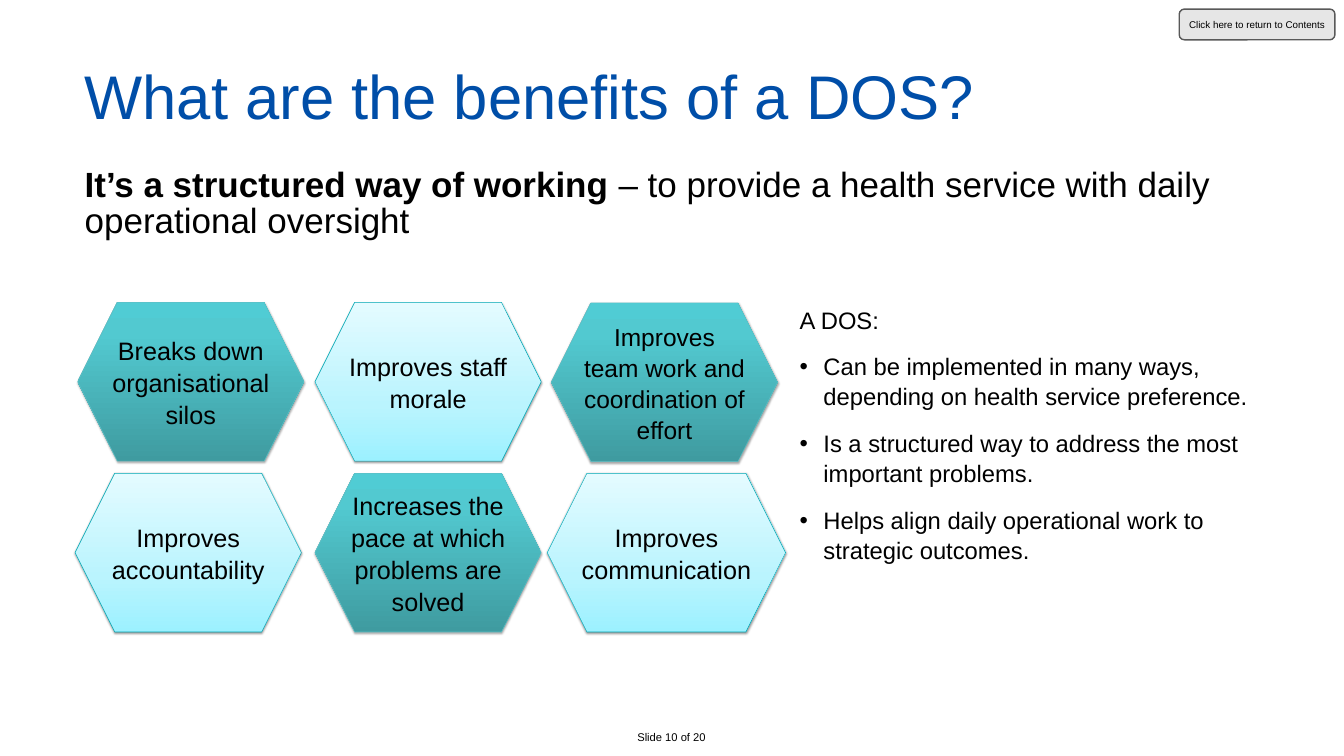
from copy import deepcopy

from lxml import etree
from pptx import Presentation
from pptx.dml.color import RGBColor
from pptx.enum.shapes import MSO_SHAPE
from pptx.enum.text import MSO_ANCHOR, MSO_AUTO_SIZE, PP_ALIGN
from pptx.oxml.ns import qn
from pptx.util import Inches, Pt

HEXAGON, ROUNDED = MSO_SHAPE.HEXAGON, MSO_SHAPE.ROUNDED_RECTANGLE
LEFT, CENTER = PP_ALIGN.LEFT, PP_ALIGN.CENTER
TOP, MIDDLE = MSO_ANCHOR.TOP, MSO_ANCHOR.MIDDLE
NO_FIT = MSO_AUTO_SIZE.NONE

BLACK, BLUE = "000000", "004EA8"
LINE_SPACING = 1.05
DARK = {
    "stops": [(0, "3F9BA0"), (0.8, "52C9D0"), (1, "50CCD4")],
    "line": "5FC0C6", "shadow_alpha": 35, "shadow_distance": 1.8,
}
LIGHT = {
    "stops": [(0, "9CF1FF"), (0.35, "BAF4FE"), (1, "E4FBFF")],
    "line": "00A4B1", "shadow_alpha": 38, "shadow_distance": 1.6,
}

# Text, left, top, width, text size; the looks alternate along the grid
BENEFITS = [
    ("Breaks down organisational silos", 1.54, 6, 4.49, 36),
    ("Improves staff morale", 6.25, 6, 4.49, 36),
    ("Improves team work and coordination of effort", 10.94, 6.01, 4.49, 35),
    ("Improves accountability", 1.49, 9.39, 4.49, 36),
    ("Increases the pace at which problems are solved", 6.25, 9.39, 4.49, 36),
    ("Improves communication", 10.86, 9.39, 4.73, 36),
]
HEXAGON_HEIGHT = 3.15

FEATURES = [
    "Can be implemented in many ways, depending on health service preference.",
    "Is a structured way to address the most important problems.",
    "Helps align daily operational work to strategic outcomes.",
]


def color(hex_value):
    return RGBColor.from_string(hex_value)


def set_values(target, values):
    for name, value in values.items():
        setattr(target, name, value)


def place(shape, left, top, width, height):
    set_values(shape, {
        "left": Inches(left), "top": Inches(top),
        "width": Inches(width), "height": Inches(height),
    })


def format_frame(frame, anchor=MIDDLE, inset=0):
    side, edge = Inches(inset), Inches(inset / 2)
    set_values(frame, {
        "word_wrap": True, "auto_size": NO_FIT, "vertical_anchor": anchor,
        "margin_left": side, "margin_right": side,
        "margin_top": edge, "margin_bottom": edge,
    })


def write(paragraph, pieces, size, hex_value=BLACK, **layout):
    """Fill a paragraph with (text, bold) pieces."""
    set_values(paragraph, {"space_before": Pt(0), **layout})
    for text, bold in pieces:
        run = paragraph.add_run()
        run.text = text
        set_values(run.font, {"name": "Arial", "size": Pt(size), "bold": bold})
        run.font.color.rgb = color(hex_value)


def set_indent(paragraph, margin, bullet=None):
    properties = paragraph._p.get_or_add_pPr()
    hanging = Inches(0.47) if bullet else 0
    properties.set("marL", str(Inches(margin)))
    properties.set("indent", str(-hanging))
    if bullet:
        etree.SubElement(properties, qn("a:buFont")).set("typeface", "Arial")
        etree.SubElement(properties, qn("a:buChar")).set("char", bullet)
    else:
        etree.SubElement(properties, qn("a:buNone"))


def add_text(slide, box, pieces, size, inset=0, **layout):
    text_box = slide.shapes.add_textbox(*map(Inches, box))
    format_frame(text_box.text_frame, TOP, inset)
    write(text_box.text_frame.paragraphs[0], pieces, size, **layout)


def add_labelled_shape(slide, kind, box, label, size, line, line_width, **layout):
    shape = slide.shapes.add_shape(kind, *map(Inches, box))
    shape.shadow.inherit = False
    shape.line.color.rgb = color(line)
    shape.line.width = Pt(line_width)
    format_frame(shape.text_frame)
    write(shape.text_frame.paragraphs[0], [(label, False)], size,
          alignment=CENTER, **layout)
    return shape


def fill_gradient(shape, stops):
    shape.fill.gradient()
    shape.fill.gradient_angle = 90
    stop_list = shape._element.spPr.find(qn("a:gradFill")).find(qn("a:gsLst"))
    while len(stop_list) < len(stops):
        stop_list.append(deepcopy(stop_list[-1]))
    for stop, (position, hex_value) in zip(shape.fill.gradient_stops, stops):
        stop.position = position
        stop.color.rgb = color(hex_value)


def add_shadow(shape, alpha, distance):
    effects = shape._element.spPr.find(qn("a:effectLst"))
    shadow = etree.SubElement(effects, qn("a:outerShdw"), {
        "blurRad": str(Pt(3.1)), "dist": str(Pt(distance)),
        "dir": "5400000", "rotWithShape": "0",
    })
    tone = etree.SubElement(shadow, qn("a:srgbClr"), val=BLACK)
    etree.SubElement(tone, qn("a:alpha"), val=str(alpha * 1000))


def add_benefit(slide, benefit, look):
    label, left, top, width, size = benefit
    hexagon = add_labelled_shape(
        slide, HEXAGON, (left, top, width, HEXAGON_HEIGHT), label, size,
        look["line"], 0.75, line_spacing=LINE_SPACING)
    fill_gradient(hexagon, look["stops"])
    add_shadow(hexagon, look["shadow_alpha"], look["shadow_distance"])


def fill_title(title):
    place(title, 1.68, 1.23, 24.26, 1.27)
    format_frame(title.text_frame)
    write(title.text_frame.paragraphs[0],
          [("What are the benefits of a DOS?", False)], 88, BLUE,
          alignment=LEFT, line_spacing=Pt(108))


def fill_features(body):
    place(body, 15.3, 5.98, 9.69, 5.12)
    frame = body.text_frame
    format_frame(frame, TOP, 0.1)
    layout = {"space_after": Pt(24), "line_spacing": LINE_SPACING}
    heading = frame.paragraphs[0]
    set_indent(heading, 0.47)
    write(heading, [("A DOS:", False)], 34, **layout)
    for feature in FEATURES:
        item = frame.add_paragraph()
        set_indent(item, 0.94, "•")
        write(item, [(feature, False)], 34, **layout)


def main():
    deck = Presentation()
    deck.slide_width, deck.slide_height = Inches(26.67), Inches(15)
    slide = deck.slides.add_slide(deck.slide_layouts[1])

    # Heading, introduction and feature list
    fill_title(slide.shapes.title)
    add_text(slide, (1.68, 3.33, 23.62, 1.51), [
        ("It’s a structured way of working ", True),
        ("– to provide a health service with daily operational oversight", False),
    ], 50, line_spacing=Pt(52), space_after=Pt(11.3))
    fill_features(slide.placeholders[1])

    # Benefit hexagons
    for index, benefit in enumerate(BENEFITS):
        add_benefit(slide, benefit, LIGHT if index % 2 else DARK)

    # Contents button and page count
    button = add_labelled_shape(
        slide, ROUNDED, (23.4, 0.18, 3.09, 0.61),
        "Click here to return to Contents", 14, "595959", 2)
    button.fill.solid()
    button.fill.fore_color.rgb = color("E6E6E6")
    add_text(slide, (11.63, 14.45, 3.39, 0.37), [("Slide 10 of 20", False)],
             16, inset=0.1, alignment=CENTER)

    deck.save("out.pptx")


if __name__ == "__main__":
    main()
